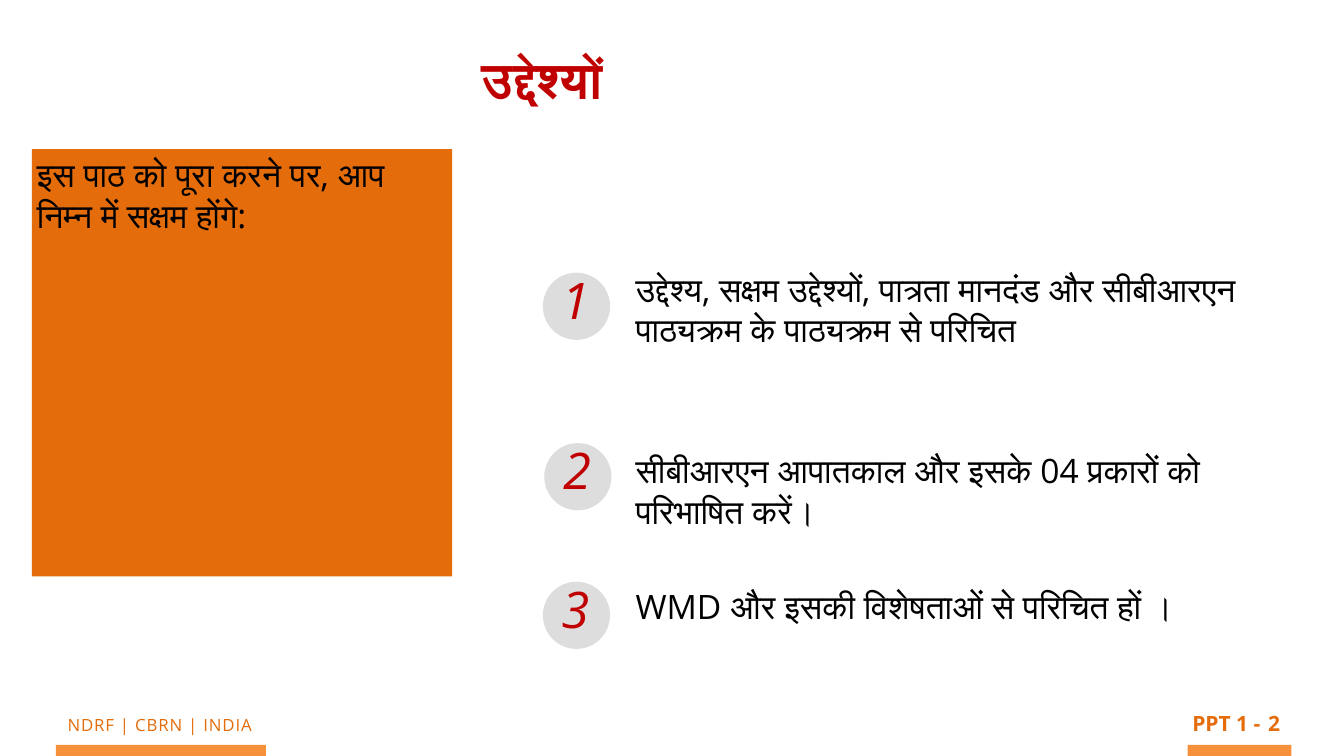
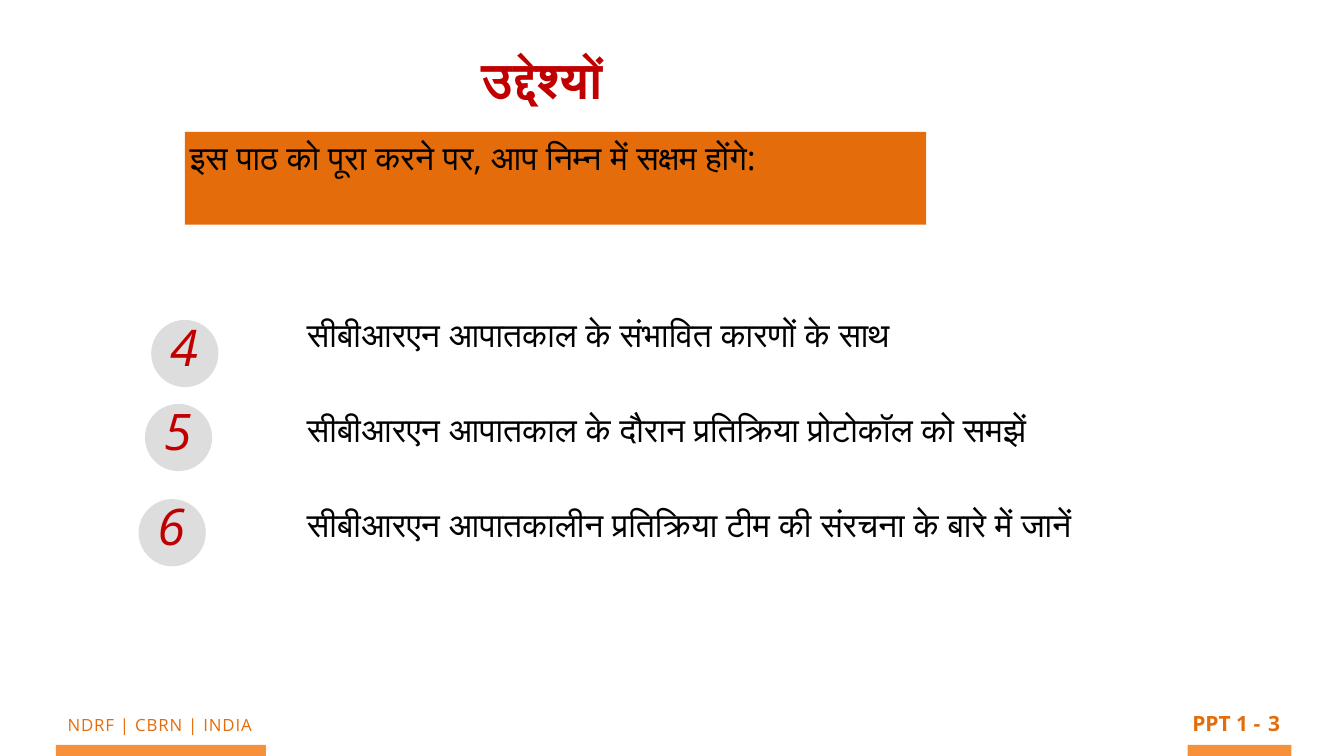
from pptx import Presentation
from pptx.dml.color import RGBColor
from pptx.enum.shapes import MSO_SHAPE
from pptx.enum.text import MSO_ANCHOR, MSO_AUTO_SIZE, PP_ALIGN
from pptx.oxml.ns import qn
from pptx.util import Pt
from lxml.etree import SubElement

FACE = "Open Sans"
ORANGE, BAND, RED, GREY, BLACK = "E46C0A", "F7903B", "C00000", "DDDDDD", "000000"
BODY = {"size": Pt(48), "color": BLACK}
TITLE = {"size": Pt(72), "color": RED, "bold": True}
DIGIT = {"size": Pt(72), "color": RED, "italic": True}
BRAND = {"size": Pt(24), "color": ORANGE}
PAGE = {"size": Pt(30), "color": ORANGE, "bold": True}
LEAD = "इस पाठ को पूरा करने पर, आप निम्न में सक्षम होंगे:"

# Each goal: text, space before it, left and top of its badge
SLIDES = [
    {"page": 2, "panel": (45.5, 213, 600.5, 610.5), "goals": (901.5, 377.5, 903, 528.5),
     "items": [
         ("उद्देश्य, सक्षम उद्देश्यों, पात्रता मानदंड और सीबीआरएन पाठ्यक्रम के पाठ्यक्रम से परिचित",
          0, 775.5, 389.5),
         ("सीबीआरएन आपातकाल और इसके 04 प्रकारों को परिभाषित करें।", 144, 777.5, 633),
         ("WMD और इसकी विशेषताओं से परिचित हों ।", 78, 775.5, 831)]},
    {"page": 3, "panel": (264, 188.5, 1059, 132.5), "goals": (432, 442, 1404.5, 343.5),
     "items": [
         ("सीबीआरएन आपातकाल के संभावित कारणों के साथ", 0, 216, 457),
         ("सीबीआरएन आपातकाल के दौरान प्रतिक्रिया प्रोटोकॉल को समझें", 78, 207, 577),
         ("सीबीआरएन आपातकालीन प्रतिक्रिया टीम की संरचना के बारे में जानें", 78, 198, 713)]},
]


def tint(code):
    return RGBColor.from_string(code)


def style(run, look):
    for key, value in look.items():
        if key == "color":
            run.font.color.rgb = tint(value)
        else:
            setattr(run.font, key, value)
    run.font.name = FACE
    SubElement(run.font._element, qn("a:cs"), typeface=FACE)


def write(shape, lines, look, align=PP_ALIGN.LEFT, wrap=True, inset=6.5):
    """Fill a shape with (text, space before) paragraphs."""
    frame = shape.text_frame
    frame.word_wrap = wrap
    frame.auto_size = MSO_AUTO_SIZE.NONE
    frame.vertical_anchor = MSO_ANCHOR.TOP
    for side in ("left", "top", "right", "bottom"):
        setattr(frame, "margin_" + side, Pt(inset))
    for i, (text, gap) in enumerate(lines):
        para = frame.paragraphs[0] if i == 0 else frame.add_paragraph()
        para.alignment = align
        para.space_before = Pt(gap)
        run = para.add_run()
        run.text = text
        style(run, look)


def block(shapes, kind, box, fill):
    shape = shapes.add_shape(kind, *map(Pt, box))
    shape.shadow.inherit = False
    shape.fill.solid()
    shape.fill.fore_color.rgb = tint(fill)
    shape.line.fill.background()
    return shape


def label(shapes, box, lines, look, **rest):
    shape = shapes.add_textbox(*map(Pt, box))
    write(shape, lines, look, **rest)
    return shape


def footer(slide, page):
    shapes, mid = slide.shapes, PP_ALIGN.CENTER
    brand = label(shapes, (45.5, 1014, 365.5, 42), [("NDRF | CBRN | INDIA", 0)],
                  BRAND, align=mid)
    brand.text_frame.paragraphs[0].runs[0].font._element.set("spc", "120")
    label(shapes, (1696.5, 1008.5, 111, 49), [("PPT 1 -", 0)], PAGE, align=mid, wrap=False)
    label(shapes, (1805, 1008.5, 30, 53.5), [(str(page), 0)], PAGE, align=mid)
    for left, width in ((80, 300), (1696.5, 148.5)):
        block(shapes, MSO_SHAPE.RECTANGLE, (left, 1064, width, 16), BAND)


def heading(slide, text):
    shape = slide.shapes.title
    spot = {"left": 682, "top": 62, "width": 409, "height": 99.5}
    for key, value in spot.items():
        setattr(shape, key, Pt(value))
    write(shape, [(text, 0)], TITLE)


def badge(slide, left, top, digit):
    """Grey disc with its number."""
    shapes = slide.shapes.add_group_shape().shapes
    block(shapes, MSO_SHAPE.OVAL, (left, top, 96, 96), GREY)
    label(shapes, (left + 20.5, top - 12, 65, 132.5), [(str(digit), 0)], DIGIT)


def goals(slide, box, items, first):
    label(slide.shapes, box, [(text, gap) for text, gap, _, _ in items], BODY)
    for digit, (_, _, left, top) in enumerate(items, first):
        badge(slide, left, top, digit)


def main():
    deck = Presentation()
    deck.slide_width, deck.slide_height = Pt(1920), Pt(1080)
    first = 1
    for data in SLIDES:
        slide = deck.slides.add_slide(deck.slide_layouts[5])
        footer(slide, data["page"])
        panel = block(slide.shapes, MSO_SHAPE.RECTANGLE, data["panel"], ORANGE)
        write(panel, [(LEAD, 0)], BODY, inset=7.2)
        heading(slide, "उद्देश्यों")
        goals(slide, data["goals"], data["items"], first)
        first += len(data["items"])
    deck.save("out.pptx")


if __name__ == "__main__":
    main()
